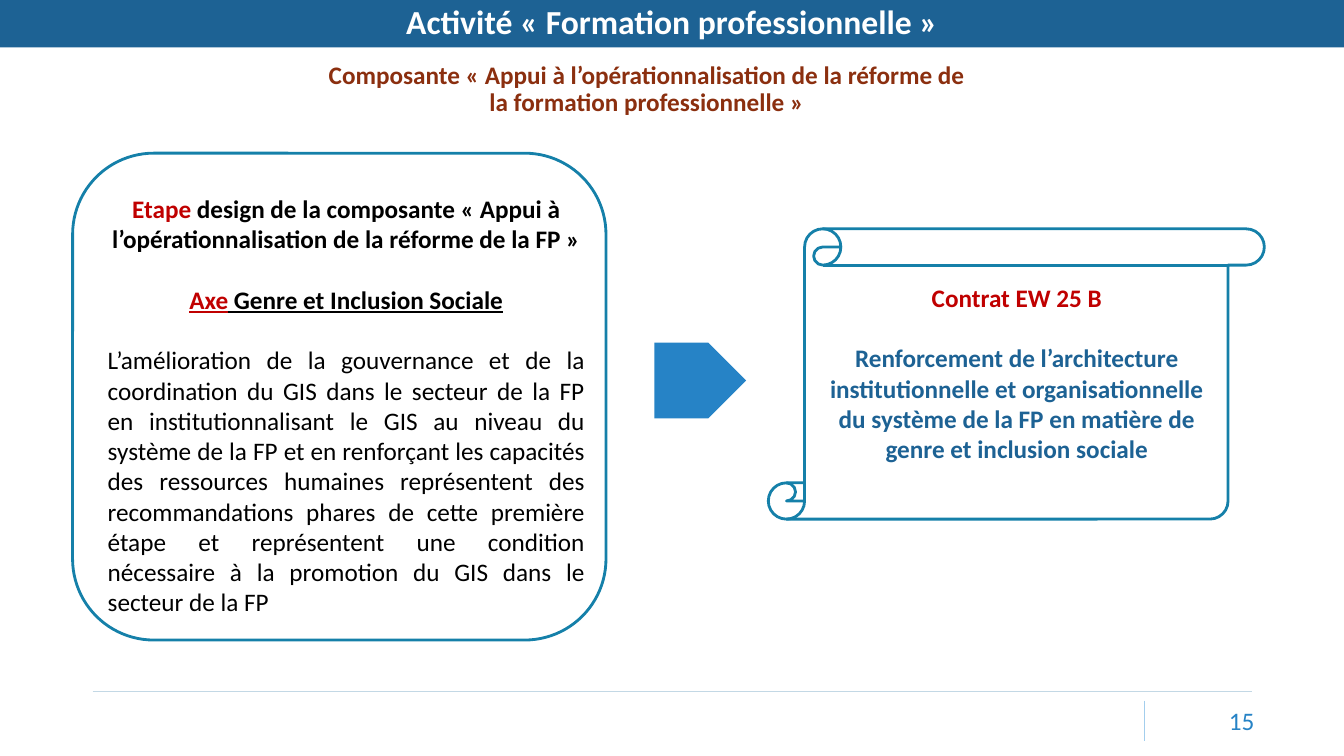
from pptx import Presentation
from pptx.dml.color import RGBColor
from pptx.enum.shapes import MSO_CONNECTOR as Link, MSO_SHAPE as Form
from pptx.enum.text import MSO_ANCHOR as Anchor, MSO_AUTO_SIZE as Fit, PP_ALIGN as Align
from pptx.oxml.ns import qn
from pptx.util import Inches, Pt
from lxml import etree

# Content: a paragraph is (alignment, space before, runs); a run is (text, format)
RED, BLUE, SKY, TEAL = "C00000", "1D6294", "2683C6", "1580A9"
BLACK, WHITE, RUST = "000000", "FFFFFF", "8B2F0F"
MID, RIGHT, FULL = Align.CENTER, Align.RIGHT, Align.JUSTIFY
GAP = 21.6  # one line of 18 pt text

TITLE = [(MID, 0, [("Activité « Formation professionnelle »",
                    dict(color=WHITE, size=24, bold=True))])]
PART = [(MID, 0, [("Composante « Appui à l’opérationnalisation de la réforme de "
                   "la formation professionnelle »", dict(color=RUST, bold=True))])]
STAGE = [
    (MID, 0, [("Etape ", dict(color=RED, bold=True)),
              ("design de la composante « Appui à l’opérationnalisation "
               "de la réforme de la FP »", dict(bold=True))]),
    (MID, GAP, [("Axe", dict(color=RED, bold=True, line=True)),
                (" Genre et Inclusion Sociale", dict(bold=True, line=True))]),
    (FULL, GAP, [("L’amélioration de la gouvernance et de la coordination du GIS dans "
                  "le secteur de la FP en institutionnalisant le GIS au niveau du "
                  "système de la FP et en renforçant les capacités des ressources "
                  "humaines représentent des recommandations phares de cette première "
                  "étape et représentent une condition nécessaire à la promotion du "
                  "GIS dans le secteur de la FP", {})]),
]
DEAL = [
    (MID, 0, [("Contrat EW 25 B", dict(color=RED, bold=True))]),
    (MID, GAP, [("Renforcement de l’architecture institutionnelle et organisationnelle "
                 "du système de la FP en matière de genre et inclusion sociale",
                 dict(color=BLUE, bold=True))]),
]
PAGE = [(RIGHT, 0, [("15", dict(color=SKY))])]

# Places: left, top, width, height in inches
RULES = [((0.92, 6.86), (12.42, 6.86), "C3D8E5"),
         ((11.35, 6.95), (11.35, 7.35), "A3CEED")]
SHAPES = [
    (Form.ROUNDED_RECTANGLE, (0.72, 1.52, 5.29, 4.83), None, TEAL),
    (Form.PENTAGON, (6.49, 3.4, 0.91, 0.75), SKY, None),
    (Form.VERTICAL_SCROLL, (7.62, 2.27, 4.92, 2.88), None, TEAL),
]
BOXES = [
    ((8.1, 2.75, 3.97, 1.92), DEAL, {}),
    ((11.49, 6.95, 0.95, 0.4), PAGE, dict(anchor=Anchor.MIDDLE, pad=(0, 0.05))),
    ((0.97, 1.87, 4.93, 4.34), STAGE, {}),
    ((3.08, 0.57, 6.67, 0.65), PART, dict(lead=0.9)),
]

deck = Presentation()
deck.slide_width, deck.slide_height = Inches(13.33), Inches(7.5)
slide = deck.slides.add_slide(deck.slide_layouts[6])


def tint(part, code):
    part.rgb = RGBColor.from_string(code)


def write(shape, paras, anchor=Anchor.TOP, pad=(0.1, 0.05), lead=None, fit=Fit.NONE):
    frame = shape.text_frame
    frame.word_wrap, frame.auto_size = True, fit
    frame.vertical_anchor = anchor
    frame.margin_left = frame.margin_right = Inches(pad[0])
    frame.margin_top = frame.margin_bottom = Inches(pad[1])
    for i, (align, gap, runs) in enumerate(paras):
        para = frame.add_paragraph() if i else frame.paragraphs[0]
        para.alignment, para.space_before = align, Pt(gap)
        if lead:
            para.line_spacing = lead
        for text, look in runs:
            run = para.add_run()
            run.text = text
            font = run.font
            font.name, font.size = "Calibri", Pt(look.get("size", 18))
            font.bold = look.get("bold", False)
            font.underline = look.get("line", False)
            tint(font.color, look.get("color", BLACK))


def draw(form, place, fill, line):
    shape = slide.shapes.add_shape(form, *map(Inches, place))
    shape.shadow.inherit = False
    if fill:
        shape.fill.solid()
        tint(shape.fill.fore_color, fill)
    else:
        shape.fill.background()
    if line:
        tint(shape.line.color, line)
        shape.line.width = Pt(2)
    else:
        shape.line.fill.background()
    return shape


# Footer rules
for start, end, code in RULES:
    rule = slide.shapes.add_connector(Link.STRAIGHT, *map(Inches, start + end))
    tint(rule.line.color, code)
    rule.line.width = Pt(0.75)
    etree.SubElement(rule._element.spPr, qn("a:effectLst"))

# Title band
band = draw(Form.RECTANGLE, (0, 0, 13.33, 0.47), BLUE, None)
write(band, TITLE, anchor=Anchor.MIDDLE, pad=(0.11, 0.06), lead=0.9)

# Frames and arrow
for item in SHAPES:
    draw(*item)

# Texts
for place, paras, look in BOXES:
    box = slide.shapes.add_textbox(*map(Inches, place))
    write(box, paras, fit=Fit.SHAPE_TO_FIT_TEXT, **look)

deck.save("out.pptx")
